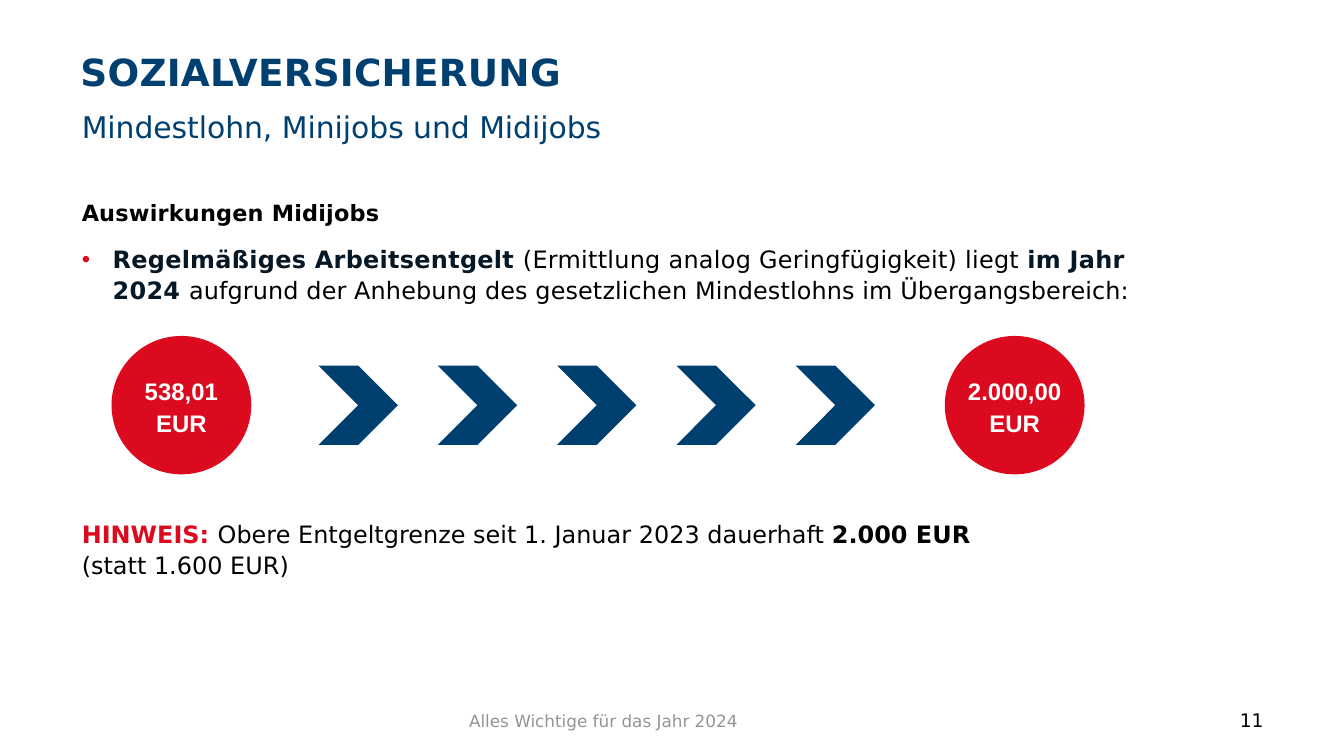
import pptx
import pptx.dml.color
import pptx.enum.shapes
import pptx.enum.text
import pptx.oxml.ns
import pptx.util
from lxml import etree
from pptx.util import Inches

NAVY = pptx.dml.color.RGBColor(0x00, 0x40, 0x70)
RED = pptx.dml.color.RGBColor(0xDC, 0x0A, 0x1E)
INK = pptx.dml.color.RGBColor(0x06, 0x17, 0x26)
BLACK = pptx.dml.color.RGBColor(0x00, 0x00, 0x00)
GREY = pptx.dml.color.RGBColor(0x95, 0x93, 0x9A)
WHITE = pptx.dml.color.RGBColor(0xFF, 0xFF, 0xFF)

BODY_FONT = "DejaVu Sans"
BODY_SIZE = 12.8
BODY_LINE = pptx.util.Pt(16.5)
MIDDLE = pptx.enum.text.MSO_ANCHOR.MIDDLE


def add_run(paragraph, text, size, color, bold=False, spacing=0, font=BODY_FONT):
    run = paragraph.add_run()
    run.text = text
    run.font.name = font
    run.font.size = pptx.util.Pt(size)
    run.font.bold = bold
    run.font.color.rgb = color
    if spacing:
        run.font._element.set("spc", str(round(spacing * 100)))


def add_text_frame(slide, left, top, width, height, anchor=pptx.enum.text.MSO_ANCHOR.TOP):
    frame = slide.shapes.add_textbox(
        Inches(left), Inches(top), Inches(width), Inches(height)).text_frame
    frame.word_wrap = True
    frame.vertical_anchor = anchor
    return frame


def add_bullet(paragraph, color, indent):
    properties = paragraph._p.get_or_add_pPr()
    properties.set("marL", str(Inches(indent)))
    properties.set("indent", str(-Inches(indent)))
    qn = pptx.oxml.ns.qn
    bullet_color = etree.SubElement(properties, qn("a:buClr"))
    etree.SubElement(bullet_color, qn("a:srgbClr")).set("val", str(color))
    etree.SubElement(properties, qn("a:buFont")).set("typeface", "Arial")
    etree.SubElement(properties, qn("a:buChar")).set("char", "•")


def add_filled_shape(slide, kind, left, top, width, height, color):
    shape = slide.shapes.add_shape(
        kind, Inches(left), Inches(top), Inches(width), Inches(height))
    shape.shadow.inherit = False
    shape.fill.solid()
    shape.fill.fore_color.rgb = color
    shape.line.fill.background()
    return shape


def add_amount_circle(slide, left, amount):
    circle = add_filled_shape(
        slide, pptx.enum.shapes.MSO_SHAPE.OVAL, left, 2.5, 1.04, 1.03, RED)
    frame = circle.text_frame
    frame.word_wrap = True
    frame.vertical_anchor = MIDDLE
    frame.margin_left = frame.margin_right = 0
    frame.margin_top = frame.margin_bottom = 0
    paragraph = frame.paragraphs[0]
    paragraph.alignment = pptx.enum.text.PP_ALIGN.CENTER
    paragraph.line_spacing = pptx.util.Pt(17.2)
    add_run(paragraph, amount, BODY_SIZE, WHITE, bold=True, font="Arial")


def add_headings(slide):
    title = add_text_frame(slide, 0.5, 0.32, 8.11, 0.44).paragraphs[0]
    add_run(title, "SOZIALVERSICHERUNG", 20, NAVY, True, 0.1)
    subtitle = add_text_frame(slide, 0.51, 0.76, 8.11, 0.28).paragraphs[0]
    add_run(subtitle, "Mindestlohn, Minijobs und Midijobs", 16, NAVY)


def add_midijob_effects(slide):
    frame = add_text_frame(slide, 0.51, 1.4, 8.11, 1)
    heading = frame.paragraphs[0]
    heading.line_spacing = BODY_LINE
    add_run(heading, "Auswirkungen Midijobs", 12, BLACK, True, 0.1)

    effect = frame.add_paragraph()
    effect.line_spacing = BODY_LINE
    effect.space_before = pptx.util.Pt(9)
    add_bullet(effect, RED, 0.23)
    add_run(effect, "Regelmäßiges Arbeitsentgelt ", BODY_SIZE, INK, True, 0.15)
    add_run(effect, "(Ermittlung analog Geringfügigkeit) liegt ",
            BODY_SIZE, BLACK, spacing=0.15)
    add_run(effect, "im Jahr 2024 ", BODY_SIZE, INK, True, 0.15)
    add_run(effect, "aufgrund der Anhebung des gesetzlichen Mindestlohns "
            "im Übergangsbereich:", BODY_SIZE, BLACK, spacing=0.05)


def add_transition_range(slide):
    add_amount_circle(slide, 0.83, "538,01 EUR")
    add_amount_circle(slide, 7.03, "2.000,00 EUR")
    first, last, count = 2.37, 5.92, 5
    pitch = (last - first) / (count - 1)
    for step in range(count):
        add_filled_shape(slide, pptx.enum.shapes.MSO_SHAPE.CHEVRON,
                         first + step * pitch, 2.72, 0.59, 0.59, NAVY)


def add_hint(slide):
    hint = add_text_frame(slide, 0.51, 3.8, 8.11, 0.6).paragraphs[0]
    hint.line_spacing = BODY_LINE
    add_run(hint, "HINWEIS: ", BODY_SIZE, RED, True)
    add_run(hint, "Obere Entgeltgrenze seit 1. Januar 2023 dauerhaft ",
            BODY_SIZE, BLACK)
    add_run(hint, "2.000 EUR ", BODY_SIZE, BLACK, True)
    hint.add_line_break()
    add_run(hint, "(statt 1.600 EUR)", BODY_SIZE, BLACK)


def add_footer(slide):
    footer = add_text_frame(slide, 3.42, 5.21, 3.17, 0.3, MIDDLE)
    footer.margin_left = footer.margin_right = Inches(0.07)
    footer.margin_top = footer.margin_bottom = Inches(0.04)
    add_run(footer.paragraphs[0], "Alles Wichtige für das Jahr 2024", 9, GREY)
    page_number = add_text_frame(slide, 7.17, 5.21, 2.33, 0.3, MIDDLE).paragraphs[0]
    page_number.alignment = pptx.enum.text.PP_ALIGN.RIGHT
    add_run(page_number, "11", 10, BLACK)


def main():
    presentation = pptx.Presentation()
    presentation.slide_width = Inches(10)
    presentation.slide_height = Inches(10 * 9 / 16)
    slide = presentation.slides.add_slide(presentation.slide_layouts[6])
    add_headings(slide)
    add_midijob_effects(slide)
    add_transition_range(slide)
    add_hint(slide)
    add_footer(slide)
    presentation.save("out.pptx")


if __name__ == "__main__":
    main()
